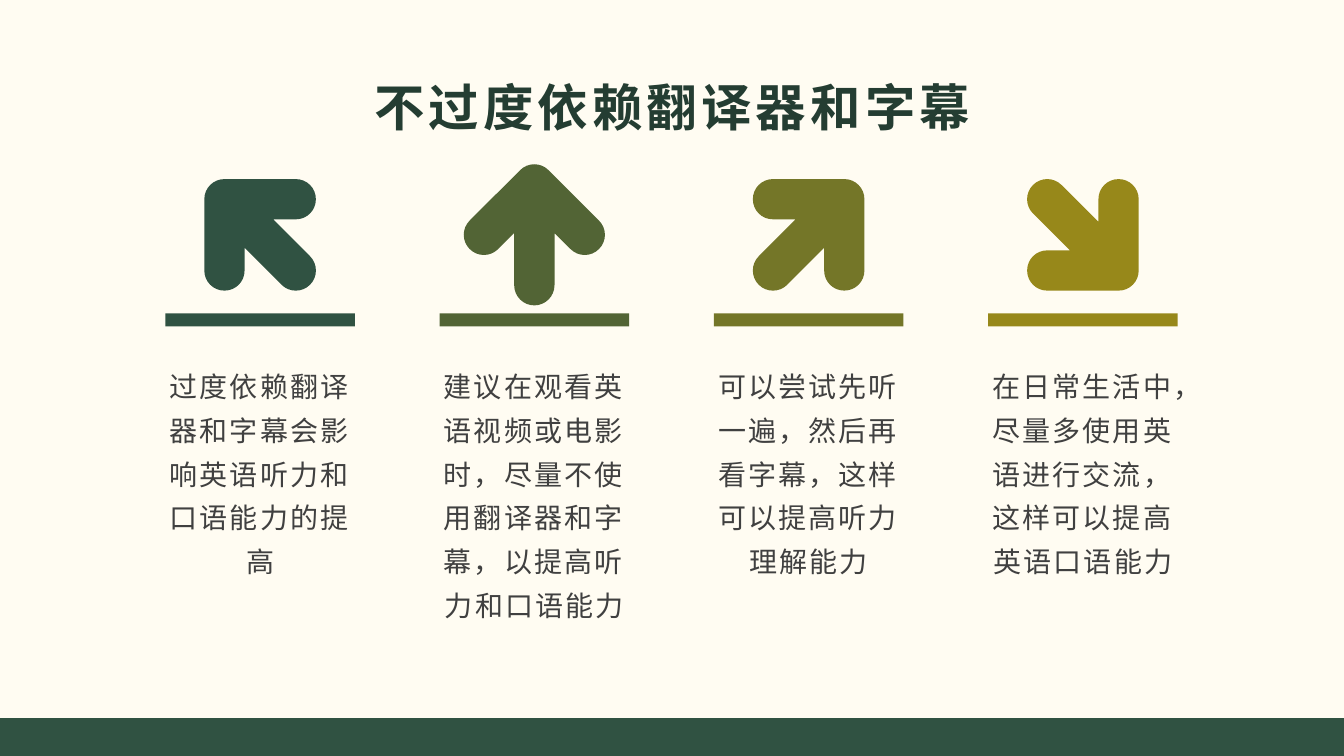
from math import cos, radians, sin, sqrt, tan

from lxml import etree
from pptx import Presentation
from pptx.dml.color import RGBColor
from pptx.enum.lang import MSO_LANGUAGE_ID
from pptx.enum.shapes import MSO_SHAPE
from pptx.enum.text import MSO_ANCHOR, PP_ALIGN
from pptx.oxml.ns import qn
from pptx.util import Inches, Pt

RECTANGLE = MSO_SHAPE.RECTANGLE
CENTER = PP_ALIGN.CENTER
TOP, MIDDLE = MSO_ANCHOR.TOP, MSO_ANCHOR.MIDDLE
CHINESE = MSO_LANGUAGE_ID.SIMPLIFIED_CHINESE

CREAM = RGBColor(0xFF, 0xFC, 0xF2)
GREEN = RGBColor(0x30, 0x52, 0x42)
MOSS = RGBColor(0x52, 0x64, 0x35)
OLIVE = RGBColor(0x74, 0x76, 0x28)
GOLD = RGBColor(0x97, 0x88, 0x1A)
TITLE_GREEN = RGBColor(0x24, 0x3D, 0x32)
GREY = RGBColor(0x40, 0x40, 0x40)
FONT = "Noto Sans CJK SC"

TITLE = "不过度依赖翻译器和字幕"
# colour, clockwise turn of an upward arrow in degrees, advice
COLUMNS = [
    (GREEN, -45, "过度依赖翻译器和字幕会影响英语听力和口语能力的提高"),
    (MOSS, 0, "建议在观看英语视频或电影时，尽量不使用翻译器和字幕，以提高听力和口语能力"),
    (OLIVE, 45, "可以尝试先听一遍，然后再看字幕，这样可以提高听力理解能力"),
    (GOLD, 135, "在日常生活中，尽量多使用英语进行交流，这样可以提高英语口语能力"),
]

WIDTH, HEIGHT = 13.33, 7.5
FIRST_CENTER, PITCH = 2.58, 2.72
ARROW_TOP, ARROW_SIZE = 1.63, 1.4
BAR_TOP, BAR_WIDTH, BAR_HEIGHT = 3.11, 1.88, 0.13
TEXT_TOP, TEXT_WIDTH, TEXT_HEIGHT = 3.52, 2.17, 3.31
FOOTER_TOP = 0.95 * HEIGHT

# arrow geometry in thousandths of an inch, inside its square frame
UNITS = 1000
SIDE = int(ARROW_SIZE * UNITS)
MIDPOINT, RADIUS = SIDE / 2, 200
FAR = SIDE - RADIUS
INNER_Y = RADIUS * (1 + sqrt(2))


def arc(center_x, center_y, start, end):
    """Bezier points (control, control, end) of a clockwise arc."""
    handle = 4 / 3 * tan(radians(end - start) / 4)
    begin, finish = radians(start), radians(end)
    offsets = [
        (cos(begin) - handle * sin(begin), sin(begin) + handle * cos(begin)),
        (cos(finish) + handle * sin(finish), sin(finish) - handle * cos(finish)),
        (cos(finish), sin(finish)),
    ]
    return [(center_x + RADIUS * x, center_y + RADIUS * y) for x, y in offsets]


def arc_start(center_x, center_y, angle):
    return [(center_x + RADIUS * cos(radians(angle)),
             center_y + RADIUS * sin(radians(angle)))]


def round_end(center_x, center_y, start):
    """A line to a round stroke end, then its two quarter arcs."""
    return [("a:lnTo", arc_start(center_x, center_y, start)),
            ("a:cubicBezTo", arc(center_x, center_y, start, start + 90)),
            ("a:cubicBezTo", arc(center_x, center_y, start + 90, start + 180))]


ARROW_OUTLINE = [
    ("a:moveTo", arc_start(MIDPOINT, RADIUS, -135)),
    ("a:cubicBezTo", arc(MIDPOINT, RADIUS, -135, -45)),
    *round_end(FAR, MIDPOINT, -45),
    ("a:lnTo", [(MIDPOINT + RADIUS, INNER_Y + RADIUS)]),
    *round_end(MIDPOINT, FAR, 0),
    ("a:lnTo", [(MIDPOINT - RADIUS, INNER_Y + RADIUS)]),
    *round_end(RADIUS, MIDPOINT, 45),
    ("a:close", []),
]


def paint(shape, color):
    shape.shadow.inherit = False
    shape.fill.solid()
    shape.fill.fore_color.rgb = color
    shape.line.fill.background()


def add_bar(page, left, top, width, height, color):
    bar = page.shapes.add_shape(
        RECTANGLE, Inches(left), Inches(top), Inches(width), Inches(height))
    paint(bar, color)


def add_arrow(page, center, turn, color):
    """Frame a square freeform, then give it the curved arrow outline."""
    builder = page.shapes.build_freeform(0, 0, scale=Inches(1) / UNITS)
    builder.add_line_segments([(SIDE, 0), (SIDE, SIDE), (0, SIDE)])
    arrow = builder.convert_to_shape(Inches(center - ARROW_SIZE / 2), Inches(ARROW_TOP))
    outline = next(arrow._element.iter(qn("a:path")))
    for step in list(outline):
        outline.remove(step)
    for tag, points in ARROW_OUTLINE:
        step = etree.SubElement(outline, qn(tag))
        for x, y in points:
            etree.SubElement(step, qn("a:pt"), x=str(round(x)), y=str(round(y)))
    arrow.rotation = turn
    paint(arrow, color)


def add_text(page, place, text, size, color, tracking, anchor=TOP, bold=False, spacing=1.0):
    """Add centred text; tracking is the extra letter spacing in points."""
    box = page.shapes.add_textbox(*map(Inches, place))
    frame = box.text_frame
    frame.word_wrap = True
    frame.vertical_anchor = anchor
    para = frame.paragraphs[0]
    para.text = text
    para.alignment = CENTER
    para.line_spacing = spacing
    font = para.font
    font.name, font.size, font.bold = FONT, Pt(size), bold
    font.color.rgb = color
    font.language_id = CHINESE
    properties = font._rPr
    properties.set("spc", str(int(tracking * 100)))
    etree.SubElement(properties, qn("a:ea")).set("typeface", FONT)


def main():
    deck = Presentation()
    deck.slide_width, deck.slide_height = Inches(WIDTH), Inches(HEIGHT)
    page = deck.slides.add_slide(deck.slide_layouts[6])
    page.background.fill.solid()
    page.background.fill.fore_color.rgb = CREAM

    add_bar(page, 0, FOOTER_TOP, WIDTH, HEIGHT - FOOTER_TOP, GREEN)
    add_text(page, (0.67, 0.67, 12, 0.77), TITLE, 36, TITLE_GREEN, 3, MIDDLE, bold=True)
    for index, (color, turn, advice) in enumerate(COLUMNS):
        center = FIRST_CENTER + index * PITCH
        add_arrow(page, center, turn, color)
        place = (center - TEXT_WIDTH / 2, TEXT_TOP, TEXT_WIDTH, TEXT_HEIGHT)
        add_text(page, place, advice, 20, GREY, 1.5, spacing=1.3)
        add_bar(page, center - BAR_WIDTH / 2, BAR_TOP, BAR_WIDTH, BAR_HEIGHT, color)
    deck.save("out.pptx")


if __name__ == "__main__":
    main()
